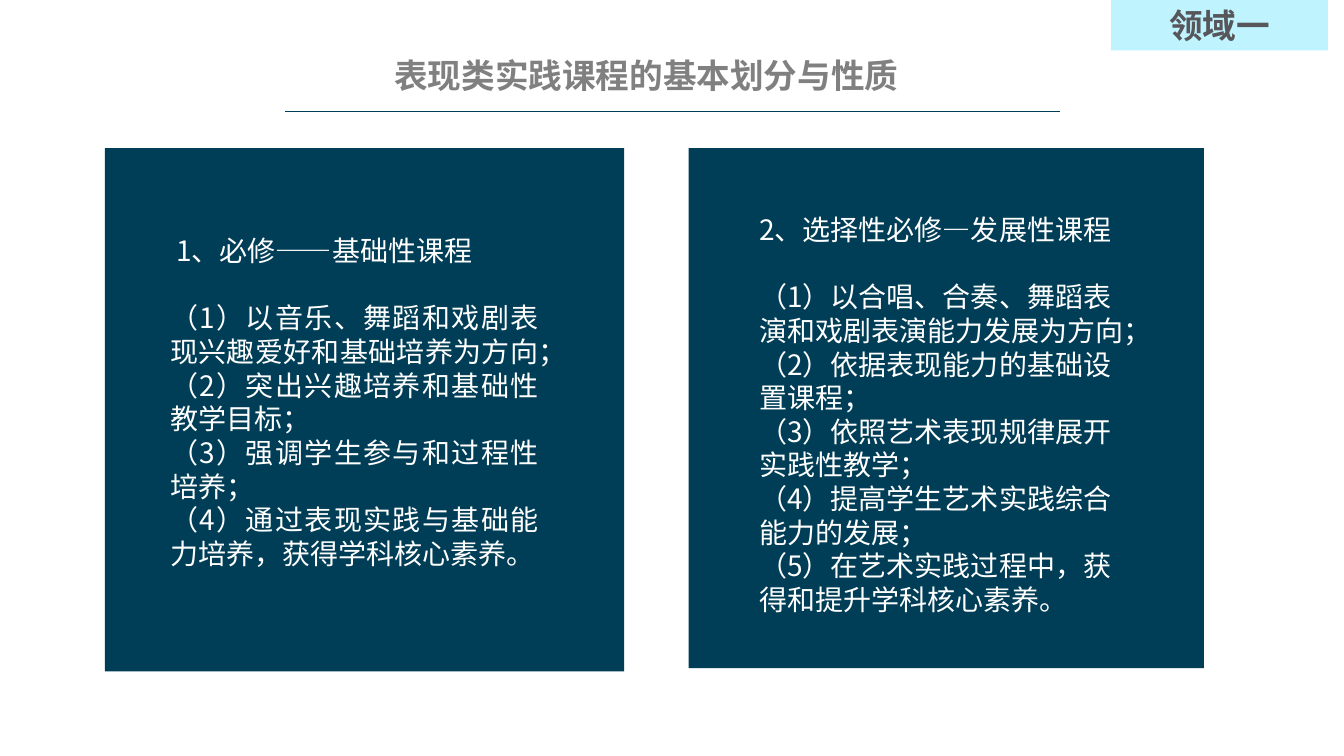
from dataclasses import dataclass
from lxml.etree import SubElement
from pptx import Presentation
from pptx.dml.color import RGBColor
from pptx.enum.shapes import MSO_CONNECTOR, MSO_SHAPE
from pptx.enum.text import MSO_ANCHOR, PP_ALIGN
from pptx.oxml.ns import qn
from pptx.util import Inches, Pt


@dataclass(frozen=True)
class Theme:
    navy: str = "003E57"
    cyan: str = "BFF4FF"
    title_gray: str = "808080"
    tag_gray: str = "57565A"
    white: str = "FFFFFF"
    heading_font: str = "Calibri"
    body_font: str = "Noto Sans CJK SC"
    heading_size: int = 24
    body_size: int = 20
    body_leading: int = 24


THEME = Theme()
HEADING = {"name": THEME.heading_font, "size": Pt(THEME.heading_size), "bold": True}
BODY = {"name": THEME.body_font, "size": Pt(THEME.body_size), "bold": False}

REQUIRED = [
    "1、必修——基础性课程",
    "（1）以音乐、舞蹈和戏剧表现兴趣爱好和基础培养为方向；",
    "（2）突出兴趣培养和基础性教学目标；",
    "（3）强调学生参与和过程性培养；",
    "（4）通过表现实践与基础能力培养，获得学科核心素养。",
]
ELECTIVE = [
    "2、选择性必修—发展性课程",
    "（1）以合唱、合奏、舞蹈表演和戏剧表演能力发展为方向；",
    "（2）依据表现能力的基础设置课程；",
    "（3）依照艺术表现规律展开实践性教学；",
    "（4）提高学生艺术实践综合能力的发展；",
    "（5）在艺术实践过程中，获得和提升学科核心素养。",
]


def to_inches(box):
    return [Inches(length) for length in box]


def write(paragraph, text, style, color, alignment):
    run = paragraph.add_run()
    run.text = text
    for name, value in style.items():
        setattr(run.font, name, value)
    run.font.color.rgb = RGBColor.from_string(color)
    paragraph.alignment = alignment


def add_block(slide, box, color):
    """Add a flat rectangle without outline."""
    block = slide.shapes.add_shape(MSO_SHAPE.RECTANGLE, *to_inches(box))
    block.shadow.inherit = False
    block.fill.solid()
    block.fill.fore_color.rgb = RGBColor.from_string(color)
    block.line.fill.background()
    return block


def add_title(slide, box, text, rule_width):
    left, top, width, height = box
    frame = slide.shapes.add_textbox(*to_inches(box)).text_frame
    frame.word_wrap = True
    frame.margin_top = frame.margin_bottom = Inches(0.04)
    frame.vertical_anchor = MSO_ANCHOR.MIDDLE
    write(frame.paragraphs[0], text, HEADING, THEME.title_gray, PP_ALIGN.CENTER)

    rule_y = top + height + 0.12
    rule = slide.shapes.add_connector(
        MSO_CONNECTOR.STRAIGHT, *to_inches((left, rule_y, left + rule_width, rule_y)))
    rule.line.color.rgb = RGBColor.from_string(THEME.navy)
    rule.line.width = Pt(0.25)
    SubElement(rule._element.spPr, qn("a:effectLst"))


def add_course_panel(slide, box, text_box, lines, alignment, heading_indent=0):
    """Add a panel; text_box is given relative to the panel's corner."""
    add_block(slide, box, THEME.navy)
    dx, dy, width, height = text_box
    frame = slide.shapes.add_textbox(
        *to_inches((box[0] + dx, box[1] + dy, width, height))).text_frame
    frame.word_wrap = True
    for index, line in enumerate(lines):
        paragraph = frame.add_paragraph() if index else frame.paragraphs[0]
        paragraph.line_spacing = Pt(THEME.body_leading)
        write(paragraph, line, BODY, THEME.white, alignment)
    heading = frame.paragraphs[0]
    heading.space_after = Pt(THEME.body_leading)
    if heading_indent:
        heading._p.get_or_add_pPr().set("indent", str(Inches(heading_indent)))


def add_tag(slide, box, text):
    frame = add_block(slide, box, THEME.cyan).text_frame
    frame.vertical_anchor = MSO_ANCHOR.MIDDLE
    write(frame.paragraphs[0], text, HEADING, THEME.tag_gray, PP_ALIGN.CENTER)


def main():
    presentation = Presentation()
    presentation.slide_width = Inches(13.33)
    presentation.slide_height = Inches(7.5)
    slide = presentation.slides.add_slide(presentation.slide_layouts[6])
    add_title(slide, (2.83, 0.51, 7.16, 0.47), "表现类实践课程的基本划分与性质", 7.68)
    add_course_panel(slide, (6.83, 1.47, 5.11, 5.16), (0.6, 0.59, 3.88, 4.14),
                     ELECTIVE, PP_ALIGN.LEFT)
    add_course_panel(slide, (1.04, 1.47, 5.15, 5.19), (0.55, 0.8, 3.85, 3.9),
                     REQUIRED, PP_ALIGN.JUSTIFY, heading_indent=0.06)
    add_tag(slide, (11.02, 0, 2.15, 0.5), "领域一")
    presentation.save("out.pptx")


if __name__ == "__main__":
    main()
